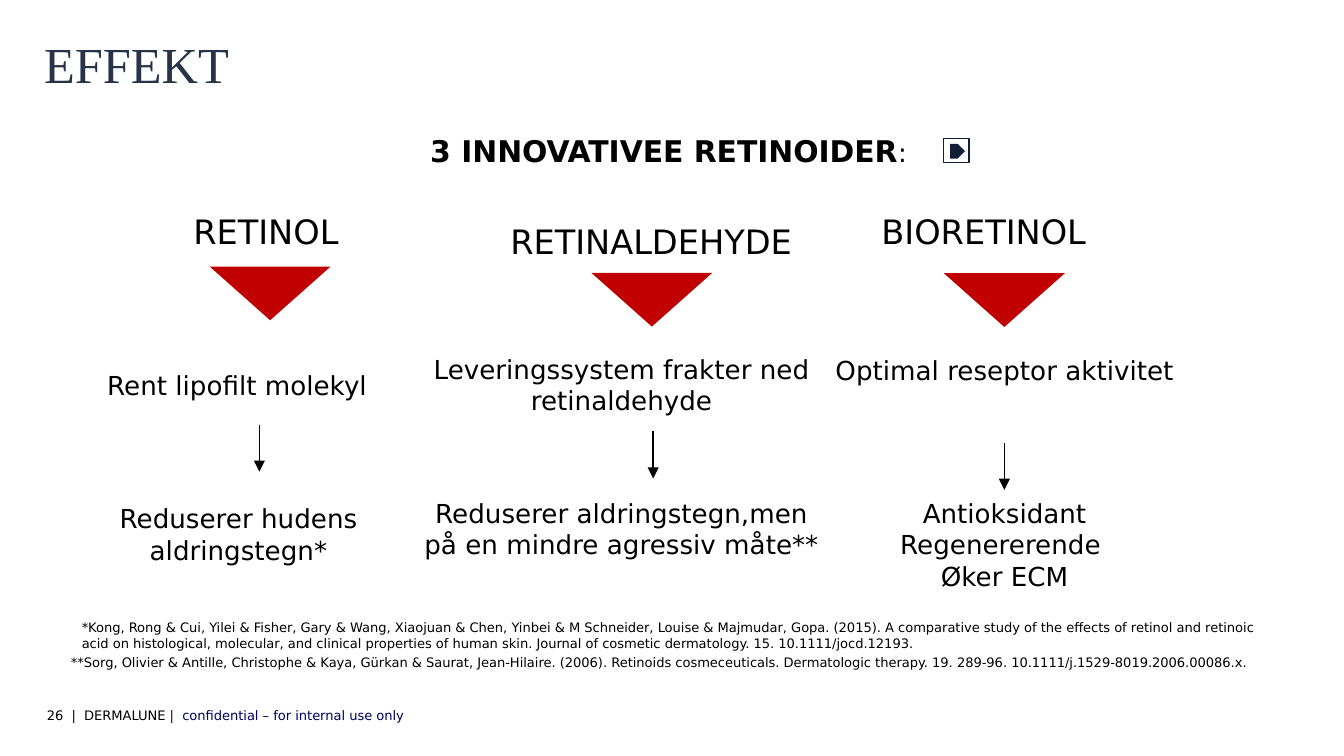
from lxml.etree import SubElement
from pptx import Presentation
from pptx.dml.color import RGBColor
from pptx.enum.shapes import MSO_CONNECTOR as CONNECTOR, MSO_SHAPE as SHAPE
from pptx.enum.text import MSO_ANCHOR as ANCHOR, PP_ALIGN as ALIGN
from pptx.oxml.ns import qn
from pptx.util import Inches, Pt

COLORS = {
    "text": "000000",
    "title": "28334A",
    "marker": "C00000",
    "icon": "111F3A",
    "notice": "000062",
}
SANS, SERIF = "DejaVu Sans", "Times New Roman"

prs = Presentation()
prs.slide_width = Inches(10)
prs.slide_height = prs.slide_width * 9 // 16
COL, ROW = prs.slide_width / 100, prs.slide_height / 56.25
slide = prs.slides.add_slide(prs.slide_layouts[6])


def grid(*cells):
    """Turn alternating column and row counts into slide lengths."""
    return [round(n * unit) for n, unit in zip(cells, (COL, ROW) * 2)]


def write(cells, paragraphs, size, align=ALIGN.LEFT, spacing=None, wrap=True, font=SANS):
    """Add a text box; each paragraph is a list of (text, colour, formatting) runs."""
    frame = slide.shapes.add_textbox(*grid(*cells)).text_frame
    frame.word_wrap = wrap
    for i, runs in enumerate(paragraphs):
        paragraph = frame.add_paragraph() if i else frame.paragraphs[0]
        paragraph.alignment = align
        if spacing:
            paragraph.line_spacing = spacing
        for text, color, changes in runs:
            run = paragraph.add_run()
            run.text = text
            run.font.name = font
            run.font.size = Pt(changes.get("size", size))
            run.font.bold = changes.get("bold", False)
            run.font.color.rgb = RGBColor.from_string(COLORS[color])
    return frame


title = write((2.3, 1.5, 69.1, 5.6), [[("EFFEKT", "title", {})]], 27, spacing=1.1, font=SERIF)
title.vertical_anchor = ANCHOR.BOTTOM
title.margin_bottom = Pt(1)

write((3.4, 8.04, 92.7, 8.1),
      [[("3 INNOVATIVEE RETINOIDER", "text", {"bold": True}), (":", "text", {"size": 14})]],
      16, ALIGN.CENTER, 1.5)

icon = slide.shapes.add_group_shape()
tag = icon.shapes.add_shape(SHAPE.PENTAGON, *grid(70.7, 10.7, 1.1, 1.1))
tag.fill.solid()
tag.fill.fore_color.rgb = RGBColor.from_string(COLORS["icon"])
tag.line.fill.background()
tag.shadow.inherit = False
border = icon.shapes.add_shape(SHAPE.RECTANGLE, *grid(70.2, 10.3, 1.9, 1.8))
border.fill.background()
border.line.color.rgb = RGBColor.from_string(COLORS["icon"])
border.line.width = Pt(0.75)
border.shadow.inherit = False

# Heading, its box, alignment and spacing; marker corner;
# mechanism and its box; arrow start; effect lines and their box
retinoids = [
    ("RETINOL", (13.4, 15.2, 13.3, 4), ALIGN.LEFT, None, (15.6, 19.83),
     "Rent lipofilt molekyl", (5.8, 27, 23.7, 3.4), (19.3, 31.6),
     ["Reduserer hudens aldringstegn*"], (1.7, 36.9, 32.1, 5.7)),
    ("RETINALDEHYDE", (36.7, 14.45, 23.5, 4.9), ALIGN.CENTER, 1.5, (44, 20.3),
     "Leveringssystem frakter ned retinaldehyde", (30.2, 25.8, 32.1, 5.7), (48.6, 32.1),
     ["Reduserer aldringstegn,men på en mindre agressiv måte**"], (30.2, 36.5, 32.1, 5.7)),
    ("BIORETINOL", (64.6, 15.2, 19, 4), ALIGN.LEFT, None, (70.23, 20.33),
     "Optimal reseptor aktivitet", (58.7, 25.9, 32.1, 3.4), (74.73, 32.95),
     ["Antioksidant", "Regenererende ", "Øker ECM"], (58.7, 36.5, 32.1, 8.1)),
]
ARROW_ROWS = 3.5

for (heading, heading_box, align, spacing, corner, mechanism, mechanism_box,
     (x, y), effects, effect_box) in retinoids:
    write(heading_box, [[(heading, "text", {})]], 18, align, spacing, wrap=False)

    marker = slide.shapes.add_shape(SHAPE.ISOSCELES_TRIANGLE, *grid(*corner, 9, 4))
    marker.rotation = 180
    marker.fill.solid()
    marker.fill.fore_color.rgb = RGBColor.from_string(COLORS["marker"])
    marker.line.fill.background()
    marker.shadow.inherit = False

    write(mechanism_box, [[(mechanism, "text", {})]], 14, ALIGN.CENTER)

    arrow = slide.shapes.add_connector(CONNECTOR.STRAIGHT, *grid(x, y, x, y + ARROW_ROWS))
    arrow.line.color.rgb = RGBColor.from_string(COLORS["text"])
    arrow.line.width = Pt(0.75)
    arrow_props = arrow._element.spPr
    SubElement(arrow_props.find(qn("a:ln")), qn("a:tailEnd"), type="triangle")
    SubElement(arrow_props, qn("a:effectLst"))

    write(effect_box, [[(line, "text", {})] for line in effects], 14, ALIGN.CENTER)

references = [
    ((5.1, 45.6, 90.9, 3.4),
     "*Kong, Rong & Cui, Yilei & Fisher, Gary & Wang, Xiaojuan & Chen, Yinbei & M Schneider, "
     "Louise & Majmudar, Gopa. (2015). A comparative study of the effects of retinol and "
     "retinoic acid on histological, molecular, and clinical properties of human skin. "
     "Journal of cosmetic dermatology. 15. 10.1111/jocd.12193."),
    ((4.3, 48.23, 93.3, 2.2),
     "**Sorg, Olivier & Antille, Christophe & Kaya, Gürkan & Saurat, Jean-Hilaire. (2006). "
     "Retinoids cosmeceuticals. Dermatologic therapy. 19. 289-96. "
     "10.1111/j.1529-8019.2006.00086.x."),
]
for box, reference in references:
    write(box, [[(reference, "text", {})]], 7)

# The double spaces around the bars are part of the footer's wording
write((2.5, 52.13, 85, 5.3),
      [[("26  |  DERMALUNE ", "text", {}),
        ("|  confidential – for internal use only", "notice", {})]], 7)

prs.save("out.pptx")
